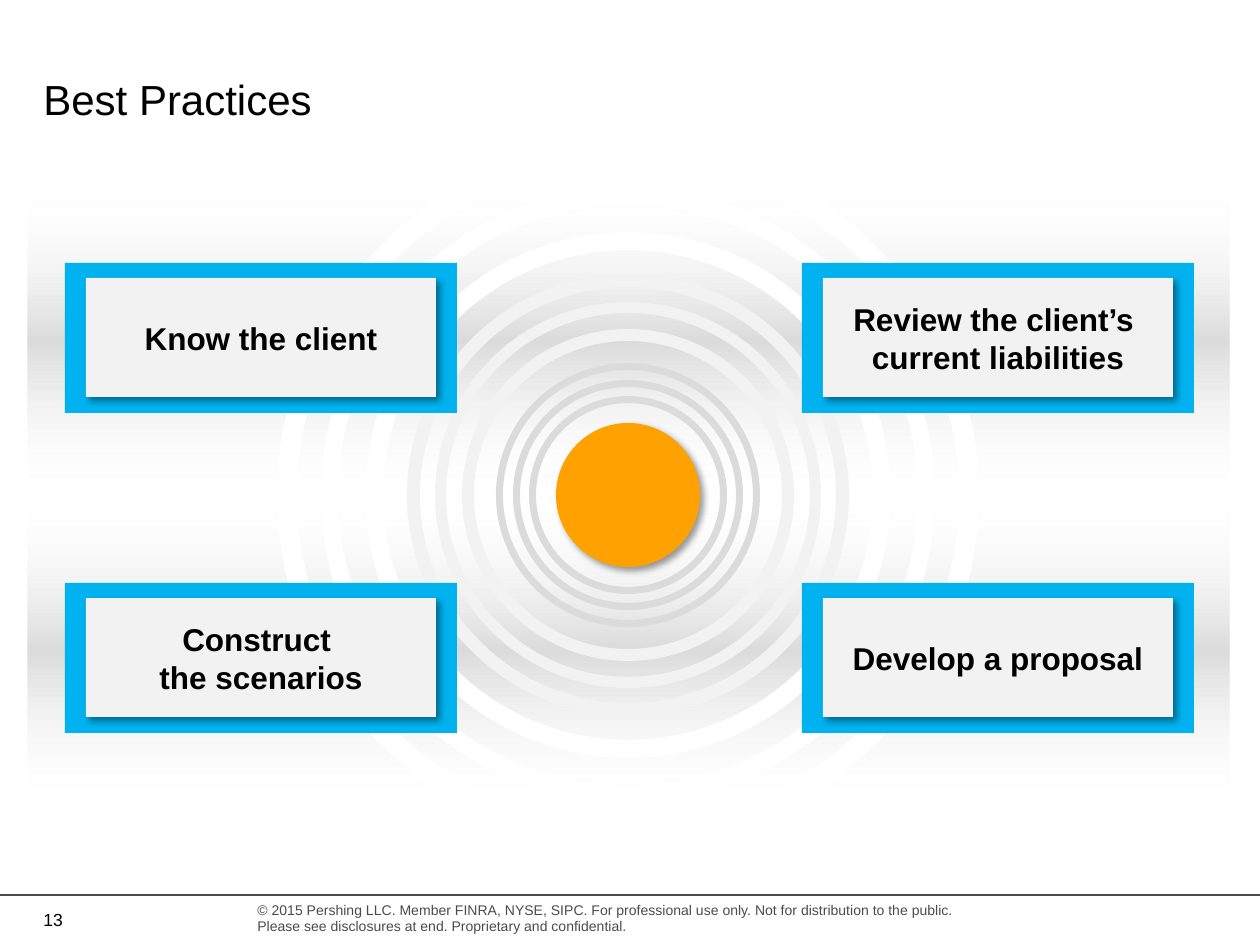
from lxml import etree
from pptx import Presentation
from pptx.dml.color import RGBColor
from pptx.enum.shapes import MSO_CONNECTOR, MSO_SHAPE
from pptx.enum.text import MSO_ANCHOR, PP_ALIGN
from pptx.oxml import parse_xml
from pptx.oxml.ns import nsdecls, qn
from pptx.util import Pt

RECT, OVAL, DONUT = MSO_SHAPE.RECTANGLE, MSO_SHAPE.OVAL, MSO_SHAPE.DONUT
LINE = MSO_CONNECTOR.STRAIGHT
TOP, MIDDLE = MSO_ANCHOR.TOP, MSO_ANCHOR.MIDDLE
LEFT, CENTER = PP_ALIGN.LEFT, PP_ALIGN.CENTER

COLORS = {
    "white": "FFFFFF", "black": "000000", "slate": "4B4B4B", "blue": "00B2EF",
    "orange": "FFA100", "pale": "F2F2F2", "gray": "DBDBDB",
}
SCALE = 914400 / 126

# diameter, ring width, color
RINGS = [
    (702, 20, "white"), (614, 17, "white"), (526, 18, "white"),
    (442, 13, "pale"), (386, 11, "pale"), (332, 12, "pale"),
    (264, 7, "gray"), (230, 7, "gray"), (198, 7, "gray"),
]
# \v is a line break within the paragraph
CARDS = [
    ["Know the client", "Review the client’s \vcurrent liabilities"],
    ["Construct \vthe scenarios", "Develop a proposal"],
]
LEGAL = (
    "© 2015 Pershing LLC. Member FINRA, NYSE, SIPC. For professional use only. "
    "Not for distribution to the public. \v"
    "Please see disclosures at end. Proprietary and confidential."
)


def px(n):
    return round(n * SCALE)


def rgb(name):
    return RGBColor.from_string(COLORS[name])


def add_shape(slide, kind, box, color):
    shape = slide.shapes.add_shape(kind, *map(px, box))
    shape.shadow.inherit = False
    shape.fill.solid()
    shape.fill.fore_color.rgb = rgb(color)
    shape.line.fill.background()
    return shape


def add_shadow(shape):
    effects = shape._element.spPr.find(qn("a:effectLst"))
    effects.append(parse_xml(
        f'<a:outerShdw {nsdecls("a")} blurRad="{Pt(4)}" dist="{Pt(3)}"'
        ' dir="2700000" algn="tl" rotWithShape="0">'
        f'<a:srgbClr val="{COLORS["black"]}"><a:alpha val="40000"/></a:srgbClr>'
        '</a:outerShdw>'))


def set_text(shape, text, size, color="black", bold=False, align=LEFT,
             anchor=TOP, wrap=True, space=1.0):
    frame = shape.text_frame
    frame.text = text
    for name, value in {"word_wrap": wrap, "vertical_anchor": anchor}.items():
        setattr(frame, name, value)
    para = frame.paragraphs[0]
    for name, value in {"alignment": align, "line_spacing": space}.items():
        setattr(para, name, value)
    look = {"name": "Arial", "size": Pt(size), "bold": bold}
    for run in para.runs:
        for name, value in look.items():
            setattr(run.font, name, value)
        run.font.color.rgb = rgb(color)


def add_label(slide, box, text, size, **look):
    set_text(slide.shapes.add_textbox(*map(px, box)), text, size, **look)


def add_band(slide, box):
    """Draw a gray bar that fades out at its top and bottom."""
    band = add_shape(slide, RECT, box, "gray")
    clear = f'<a:srgbClr val="{COLORS["white"]}"><a:alpha val="0"/></a:srgbClr>'
    solid = f'<a:srgbClr val="{COLORS["gray"]}"/>'
    stops = "".join(f'<a:gs pos="{pos}">{color}</a:gs>' for pos, color in
                    ((0, clear), (50000, solid), (100000, clear)))
    old = band._element.spPr.find(qn("a:solidFill"))
    old.getparent().replace(old, parse_xml(
        f'<a:gradFill {nsdecls("a")} rotWithShape="1"><a:gsLst>{stops}</a:gsLst>'
        '<a:lin ang="5400000" scaled="0"/></a:gradFill>'))


def add_rings(slide, cx, cy):
    for size, width, color in RINGS:
        box = (cx - size // 2, cy - size // 2, size, size)
        ring = add_shape(slide, DONUT, box, color)
        ring.adjustments[0] = width / size


def add_card(slide, box, text):
    x, y, w, h = box
    add_shape(slide, RECT, box, "blue")
    panel = add_shape(slide, RECT, (x + 21, y + 15, w - 42, h - 31), "pale")
    add_shadow(panel)
    for side in ("left", "right", "top", "bottom"):
        setattr(panel.text_frame, f"margin_{side}", px(19))
    set_text(panel, text, 18, bold=True, align=CENTER, anchor=MIDDLE, wrap=False)


def add_hub(slide, cx, cy, size):
    box = (cx - size // 2, cy - size // 2, size, size)
    add_shadow(add_shape(slide, OVAL, box, "orange"))


def add_diagram(slide, box):
    x, y, w, h = box
    cx, cy = x + 600, y + 310
    for row in range(2):
        add_band(slide, (x, y + row * h // 2, w, h // 2))
    add_rings(slide, cx, cy)
    for row, texts in enumerate(CARDS):
        for col, text in enumerate(texts):
            spot = (x + 37 + col * 737, y + 78 + row * 320, 392, 150)
            add_card(slide, spot, text)
    add_hub(slide, cx, cy, 144)


def add_footer(slide, box):
    x, y, w, h = box
    rule = slide.shapes.add_connector(LINE, px(x), px(y), px(x + w), px(y))
    rule.line.color.rgb = rgb("slate")
    rule.line.width = Pt(1)
    etree.SubElement(rule._element.spPr, qn("a:effectLst"))
    add_label(slide, (x + 31, y + 2, 57, h - 2), "13", 10,
              anchor=MIDDLE, wrap=False, space=0.95)
    add_label(slide, (x + 245, y, 830, h - 3), LEGAL, 8, color="slate")


def main():
    deck = Presentation()
    deck.slide_width, deck.slide_height = px(1260), px(945)
    slide = deck.slides.add_slide(deck.slide_layouts[6])
    add_footer(slide, (0, 895, 1260, 50))
    add_diagram(slide, (28, 185, 1201, 620))
    add_label(slide, (31, 67, 1197, 58), "Best Practices", 24)
    deck.save("out.pptx")


if __name__ == "__main__":
    main()
